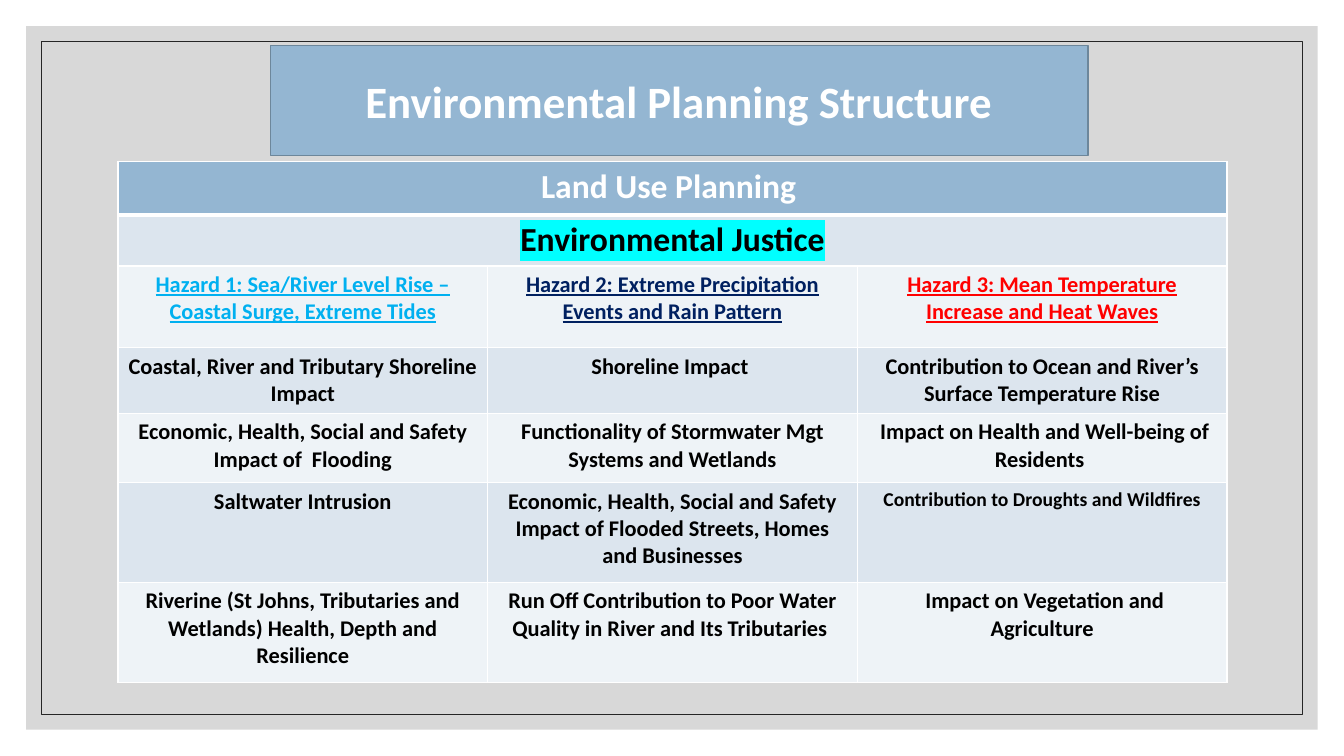
from dataclasses import dataclass
from typing import Any

from lxml.etree import SubElement
from pptx import Presentation
from pptx.dml.color import RGBColor
from pptx.enum.shapes import MSO_SHAPE as Shape
from pptx.enum.text import MSO_ANCHOR as Anchor, MSO_AUTO_SIZE as Fit, PP_ALIGN as Align
from pptx.oxml import parse_xml
from pptx.oxml.ns import nsdecls, qn
from pptx.util import Inches, Pt

BLUE, WHITE, BLACK = "94B6D2", "FFFFFF", "000000"
BANDS = ("EEF3F7", "DCE5EE")


@dataclass
class Panel:
    inset: float
    fill: str = ""
    line: str = ""


@dataclass
class Row:
    height: float
    texts: tuple[str, ...]
    size: int = 16
    colors: tuple[str, ...] = (BLACK,) * 3
    underline: bool = False
    mark: str = ""


PANELS = (Panel(0.26, fill="BFBFBF"), Panel(0.41, line="262626"))

ROWS = (
    Row(0.53, ("Land Use Planning ",), size=24, colors=(WHITE,)),
    Row(0.51, ("Environmental Justice",), size=24, mark="00FFFF"),
    Row(0.81, ("Hazard 1: Sea/River Level Rise – Coastal Surge, Extreme Tides",
               "Hazard 2: Extreme Precipitation Events and Rain Pattern",
               "Hazard 3: Mean Temperature Increase and Heat Waves"),
        colors=("00B0F0", "002060", "FF0000"), underline=True),
    Row(0.65, ("Coastal, River and Tributary Shoreline Impact",
               "Shoreline Impact ",
               "Contribution to Ocean and River’s Surface Temperature Rise")),
    Row(0.69, ("Economic, Health, Social and Safety Impact of  Flooding",
               "Functionality of Stormwater Mgt Systems and Wetlands",
               " Impact on Health and Well-being of Residents ")),
    Row(0.99, ("Saltwater Intrusion",
               "Economic, Health, Social and Safety Impact of Flooded Streets, "
               "Homes and Businesses",
               "Contribution to Droughts and Wildfires")),
    Row(0.99, ("Riverine (St Johns, Tributaries and Wetlands) Health, Depth and Resilience",
               "Run Off Contribution to Poor Water Quality in River and Its Tributaries ",
               " Impact on Vegetation and Agriculture")),
)
SMALL = "Contribution to Droughts and Wildfires"


def paint(fill: Any, color: str) -> None:
    fill.solid()
    fill.fore_color.rgb = RGBColor.from_string(color)


def write(frame: Any, text: str, *, size: int, color: str,
          underline: bool = False, mark: str = "") -> None:
    para = frame.paragraphs[0]
    para.alignment = Align.CENTER
    run = para.add_run()
    run.text = text
    font = run.font
    font.size, font.bold, font.underline = Pt(size), True, underline
    paint(font.fill, color)
    font.name = "Calibri"
    if mark:
        glow = parse_xml(f'<a:highlight {nsdecls("a")}><a:srgbClr val="{mark}"/></a:highlight>')
        run._r.get_or_add_rPr().find(qn("a:latin")).addprevious(glow)


def edge(cell: Any, top: int, bottom: int) -> None:
    props = cell._tc.get_or_add_tcPr()
    for side, width in (("L", 1), ("R", 1), ("T", top), ("B", bottom)):
        props.append(parse_xml(
            f'<a:ln{side} {nsdecls("a")} w="{Pt(width)}"><a:solidFill>'
            f'<a:srgbClr val="{WHITE}"/></a:solidFill></a:ln{side}>'))


def add_panel(slide: Any, panel: Panel) -> None:
    gap = Inches(panel.inset)
    box = slide.shapes.add_shape(Shape.RECTANGLE, gap, gap,
                                 Inches(13.33) - 2 * gap, Inches(7.5) - 2 * gap)
    box.shadow.inherit = False
    if panel.fill:
        paint(box.fill, panel.fill)
        tint = box.element.spPr.find(qn("a:solidFill"))[0]
        SubElement(tint, qn("a:alpha"), val="60000")
    else:
        box.fill.background()
    if panel.line:
        paint(box.line.fill, panel.line)
        box.line.width = Pt(0.5)
    else:
        box.line.fill.background()


def add_grid(slide: Any) -> None:
    total = sum(row.height for row in ROWS)
    grid = slide.shapes.add_table(len(ROWS), 3, Inches(1.17), Inches(1.6),
                                  Inches(11), Inches(total)).table
    grid.first_row = grid.horz_banding = False
    for i, row in enumerate(ROWS):
        grid.rows[i].height = Inches(row.height)
        for j in range(3):
            cell = grid.cell(i, j)
            edge(cell, 3 if i == 1 else 1, 3 if i == 0 else 1)
            paint(cell.fill, BANDS[i % 2] if i else BLUE)
        if len(row.texts) == 1:
            grid.cell(i, 0).merge(grid.cell(i, 2))
        for j, (text, color) in enumerate(zip(row.texts, row.colors)):
            write(grid.cell(i, j).text_frame, text, color=color,
                  size=14 if text == SMALL else row.size,
                  underline=row.underline, mark=row.mark)


def add_title(slide: Any) -> None:
    title = slide.shapes.title
    slide.shapes.element.append(title.element)
    title.left, title.top = Inches(2.68), Inches(0.45)
    title.width, title.height = Inches(8.11), Inches(1.09)
    paint(title.fill, BLUE)
    paint(title.line.fill, "6D879B")
    title.line.width = Pt(1)
    frame = title.text_frame
    frame.auto_size, frame.word_wrap = Fit.NONE, True
    frame.vertical_anchor = Anchor.MIDDLE
    write(frame, "Environmental Planning Structure", size=32, color=WHITE)


def main() -> None:
    deck = Presentation()
    deck.slide_width, deck.slide_height = Inches(13.33), Inches(7.5)
    slide = deck.slides.add_slide(deck.slide_layouts[5])
    for panel in PANELS:
        add_panel(slide, panel)
    add_grid(slide)
    add_title(slide)
    deck.save("out.pptx")


if __name__ == "__main__":
    main()
